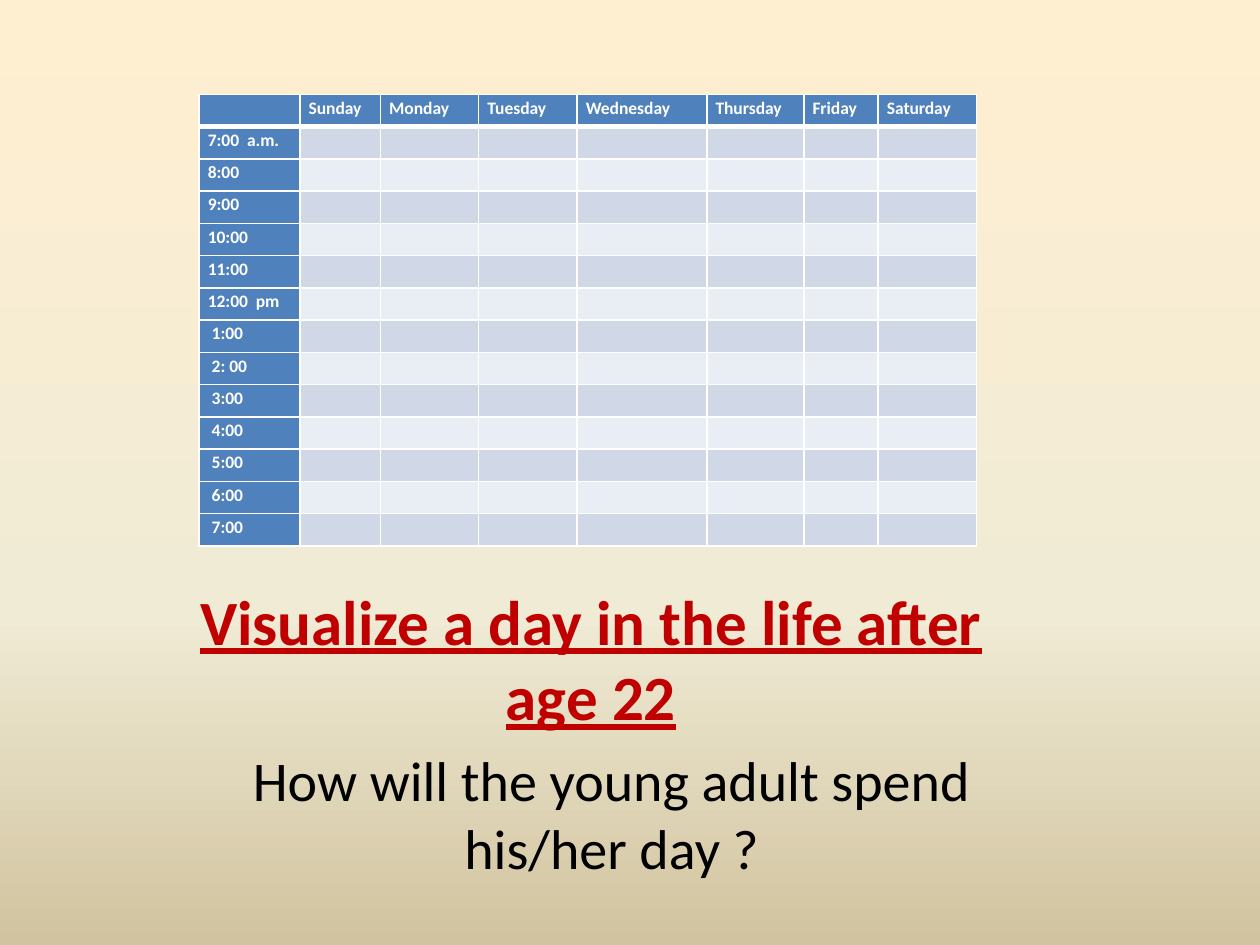
from copy import deepcopy

from lxml import etree
from pptx import Presentation
from pptx.dml.color import RGBColor
from pptx.enum import text as t
from pptx.oxml import ns
from pptx.util import Pt

# Content
TITLE = "Visualize a day in the life after age 22"
QUESTION = "How will the young adult spend his/her day ?"
DAYS = ["Sunday", "Monday", "Tuesday", "Wednesday", "Thursday", "Friday", "Saturday"]
HOURS = ["7:00  a.m.", "8:00", "9:00", "10:00", "11:00", "12:00  pm", " 1:00",
         " 2: 00", " 3:00", " 4:00", " 5:00", " 6:00", " 7:00"]

# Layout in points: left, top, width, height
TITLE_AREA = (102.24, 336.24, 470.88, 86.4)
QUESTION_AREA = (126, 422.64, 447.12, 81.36)
TABLE_LEFT, TABLE_TOP = 113.76, 54
COLUMN_WIDTHS = [57.6, 46.08, 56.16, 56.16, 74.16, 55.44, 42.48, 56.16]
ROW_HEIGHT = 18.43
CELL_MARGIN = 5
CELL_SIZE = 10

FONT = "Calibri"
RED = RGBColor(0xC0, 0x00, 0x00)
BLACK = RGBColor(0x00, 0x00, 0x00)
WHITE = RGBColor(0xFF, 0xFF, 0xFF)
BLUE = RGBColor(0x4F, 0x81, 0xBD)
BANDS = [RGBColor(0xD0, 0xD8, 0xE8), RGBColor(0xE9, 0xED, 0xF4)]
BACKGROUND = [(0, RGBColor(0xFF, 0xEF, 0xD1)),
              (0.65, RGBColor(0xF0, 0xEB, 0xD5)),
              (1, RGBColor(0xD1, 0xC3, 0x9F))]


def write(frame, text, size, color, bold=False, underline=False,
          align=t.PP_ALIGN.LEFT, spacing=None):
    para = frame.paragraphs[0]
    para.alignment = align
    para.line_spacing = spacing
    span = para.add_run()
    span.text = text
    font = span.font
    font.name, font.size, font.bold, font.underline = FONT, Pt(size), bold, underline
    font.color.rgb = color
    return para


def place(box, area, anchor):
    box.left, box.top, box.width, box.height = map(Pt, area)
    frame = box.text_frame
    frame.word_wrap = True
    frame.auto_size = t.MSO_AUTO_SIZE.NONE
    frame.vertical_anchor = anchor
    return frame


def add_borders(cell, top, bottom):
    properties = cell._tc.get_or_add_tcPr()
    widths = {"lnL": 1, "lnR": 1, "lnT": top, "lnB": bottom}
    for index, (side, width) in enumerate(widths.items()):
        line = etree.Element(ns.qn("a:" + side), w=str(Pt(width)))
        fill = etree.SubElement(line, ns.qn("a:solidFill"))
        etree.SubElement(fill, ns.qn("a:srgbClr"), val=str(WHITE))
        properties.insert(index, line)


def paint_background(page):
    fill = page.background.fill
    fill.gradient()
    fill.gradient_angle = 270
    first = page.background._cSld.find(".//" + ns.qn("a:gs"))
    first.addnext(deepcopy(first))
    for stop, (position, color) in zip(fill.gradient_stops, BACKGROUND):
        stop.position = position
        stop.color.rgb = color


def add_schedule(page):
    rows = [[""] + DAYS] + [[hour] + [""] * len(DAYS) for hour in HOURS]
    table = page.shapes.add_table(
        len(rows), len(COLUMN_WIDTHS), Pt(TABLE_LEFT), Pt(TABLE_TOP),
        Pt(sum(COLUMN_WIDTHS)), Pt(ROW_HEIGHT * len(rows))).table
    for column, width in zip(table.columns, COLUMN_WIDTHS):
        column.width = Pt(width)
    for r, row in enumerate(rows):
        table.rows[r].height = Pt(ROW_HEIGHT)
        for c, label in enumerate(row):
            cell = table.cell(r, c)
            cell.margin_left = cell.margin_right = Pt(CELL_MARGIN)
            cell.margin_top = cell.margin_bottom = 0
            cell.fill.solid()
            cell.fill.fore_color.rgb = BLUE if r == 0 or c == 0 else BANDS[(r - 1) % 2]
            add_borders(cell, top=3 if r == 1 else 1, bottom=3 if r == 0 else 1)
            if label:
                write(cell.text_frame, label, CELL_SIZE, WHITE, bold=True, spacing=1.15)
            else:
                # Small text size keeps empty cells from stretching the row
                etree.SubElement(cell.text_frame.paragraphs[0]._p,
                                 ns.qn("a:endParaRPr"), sz=str(CELL_SIZE * 100))


def main():
    deck = Presentation()
    deck.slide_width, deck.slide_height = Pt(720), Pt(540)
    page = deck.slides.add_slide(deck.slide_layouts[1])
    paint_background(page)

    # Title
    title = place(page.shapes.title, TITLE_AREA, t.MSO_ANCHOR.BOTTOM)
    write(title, TITLE, 36, RED, bold=True, underline=True, align=t.PP_ALIGN.CENTER)

    # Weekly schedule
    add_schedule(page)

    # Question, without a bullet
    body = place(page.placeholders[1], QUESTION_AREA, t.MSO_ANCHOR.TOP)
    para = write(body, QUESTION, 32, BLACK, align=t.PP_ALIGN.CENTER)
    properties = para._p.get_or_add_pPr()
    properties.set("marL", "0")
    properties.set("indent", "0")
    etree.SubElement(properties, ns.qn("a:buNone"))

    deck.save("out.pptx")


if __name__ == "__main__":
    main()
